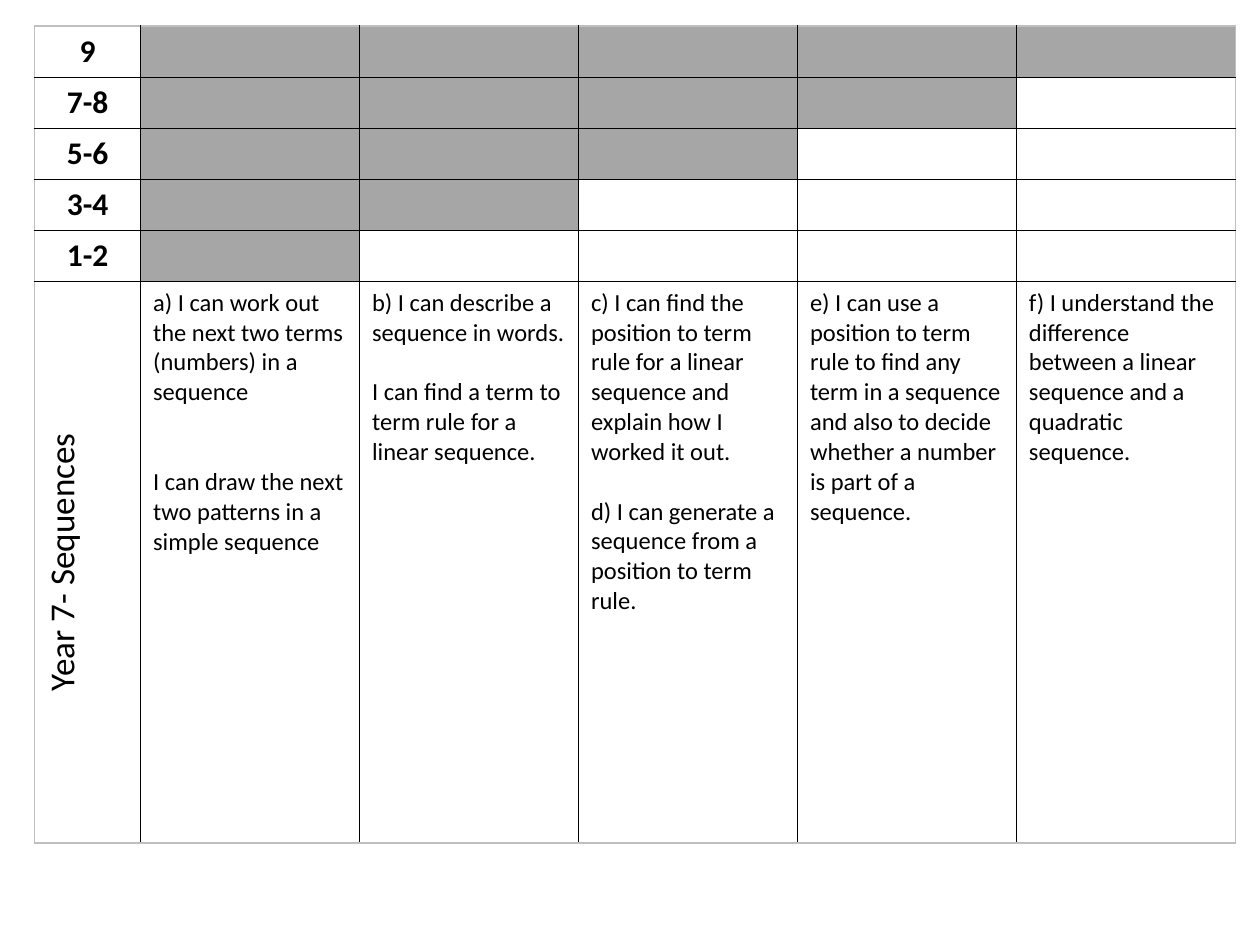
"""Build a Year 7 sequences progress grid as one table."""
import dataclasses

import lxml.etree
import pptx
import pptx.dml.color
import pptx.enum.text
import pptx.oxml.ns
import pptx.util

Pt = pptx.util.Pt
RGB = pptx.dml.color.RGBColor.from_string
qn = pptx.oxml.ns.qn


@dataclasses.dataclass
class Theme:
    font: str = "Calibri"
    text: str = "000000"
    shade: str = "A6A6A6"
    inner: str = "000000"
    outer: str = "BFBFBF"
    grade: int = 18
    topic: int = 20
    body: int = 14


theme = Theme()
grades = ["9", "7-8", "5-6", "3-4", "1-2"]
topic = "Year 7- Sequences"
skills = [
    ["a) I can work out the next two terms (numbers) in a sequence",
     "I can draw the next two patterns in a simple sequence"],
    ["b) I can describe a sequence in words.",
     "I can find a term to term rule for a linear sequence."],
    ["c) I can find the position to term rule for a linear sequence and explain how I worked it out.",
     "d) I can generate a sequence from a position to term rule."],
    ["e) I can use a position to term rule to find any term in a sequence and also to decide "
     "whether a number is part of a sequence."],
    ["f) I understand the difference between a linear sequence and a quadratic sequence."],
]
gaps = [34.2, 17.1, 17.1, 0, 0]
widths = [60.5] + [125.14] * len(skills)
heights = [29.17] * len(grades) + [320.6]
last_row, last_col = len(grades), len(skills)


def add_text(p, text, size, bold=False):
    r = p.add_run()
    r.text = text
    r.font.name = theme.font
    r.font.size = Pt(size)
    r.font.bold = bold
    r.font.color.rgb = RGB(theme.text)


def add_border(cell, side, color):
    ln = lxml.etree.SubElement(cell._tc.get_or_add_tcPr(), qn("a:ln" + side), w=str(Pt(1)))
    fill = lxml.etree.SubElement(ln, qn("a:solidFill"))
    lxml.etree.SubElement(fill, qn("a:srgbClr"), val=color)


prs = pptx.Presentation()
prs.slide_width, prs.slide_height = Pt(720), Pt(540)
s = prs.slides.add_slide(prs.slide_layouts[6])
table = s.shapes.add_table(len(heights), len(widths), Pt(19.8), Pt(15),
                           Pt(sum(widths)), Pt(sum(heights))).table
table.first_row = table.horz_banding = False
for column, width in zip(table.columns, widths):
    column.width = Pt(width)
for row, height in zip(table.rows, heights):
    row.height = Pt(height)

for i in range(len(heights)):
    for j in range(len(widths)):
        cell = table.cell(i, j)
        edges = {"L": j == 0, "R": j == last_col, "T": i == 0, "B": i == last_row}
        for side, is_outer in edges.items():
            add_border(cell, side, theme.outer if is_outer else theme.inner)
        if i < last_row and 0 < j <= last_col - i:
            cell.fill.solid()
            cell.fill.fore_color.rgb = RGB(theme.shade)
        else:
            cell.fill.background()

for i, grade in enumerate(grades):
    p = table.cell(i, 0).text_frame.paragraphs[0]
    p.alignment = pptx.enum.text.PP_ALIGN.CENTER
    add_text(p, grade, theme.grade, bold=True)

cell = table.cell(last_row, 0)
cell._tc.get_or_add_tcPr().set("vert", "vert270")
p = cell.text_frame.paragraphs[0]
p.alignment = pptx.enum.text.PP_ALIGN.CENTER
add_text(p, topic, theme.topic)

for j, (lines, gap) in enumerate(zip(skills, gaps), 1):
    tf = table.cell(last_row, j).text_frame
    for k, line in enumerate(lines):
        p = tf.add_paragraph() if k else tf.paragraphs[0]
        p.space_before = Pt(gap if k else 0)
        add_text(p, line, theme.body)

prs.save("out.pptx")
